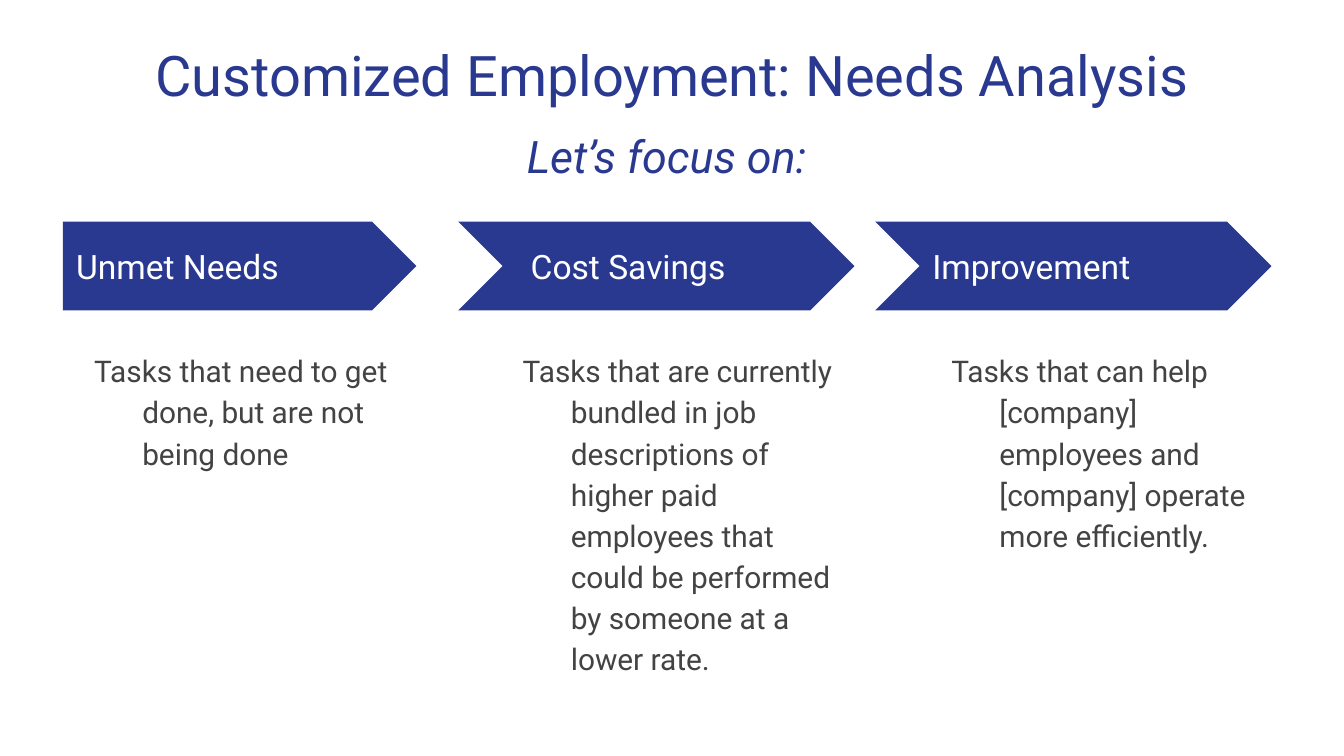
from pptx import Presentation
from pptx.dml.color import RGBColor
from pptx.enum.shapes import MSO_SHAPE
from pptx.enum.text import MSO_ANCHOR, MSO_AUTO_SIZE, PP_ALIGN
from pptx.util import Cm, Pt


def color(code):
    return RGBColor.from_string(code)


class Deck:
    font = "Roboto"
    blue = "2A3990"
    gray = "434343"
    white = "FFFFFF"
    inset = Cm(0.25)

    def __init__(self, wide, high):
        self.file = Presentation()
        self.file.slide_width = Cm(wide)
        self.file.slide_height = Cm(high)
        self.slide = self.file.slides.add_slide(self.file.slide_layouts[5])

    def style(self, shape, text, size, code, anchor=MSO_ANCHOR.TOP):
        frame = shape.text_frame
        frame.text = text
        frame.word_wrap = True
        frame.auto_size = MSO_AUTO_SIZE.NONE
        frame.vertical_anchor = anchor
        frame.margin_left = frame.margin_right = self.inset
        frame.margin_top = frame.margin_bottom = self.inset
        line = frame.paragraphs[0]
        for run in line.runs:
            run.font.name = self.font
            run.font.size = Pt(size)
            run.font.color.rgb = color(code)
        return line

    def title(self, text, left, top, wide, high):
        shape = self.slide.shapes.title
        shape.left, shape.top = Cm(left), Cm(top)
        shape.width, shape.height = Cm(wide), Cm(high)
        self.style(shape, text, 30, self.blue).alignment = PP_ALIGN.CENTER

    def box(self, left, top, wide, high):
        return self.slide.shapes.add_textbox(Cm(left), Cm(top), Cm(wide), Cm(high))

    def lead(self, text, *place):
        line = self.style(self.box(*place), text, 24, self.blue)
        line.alignment = PP_ALIGN.CENTER
        line.runs[0].font.italic = True

    def arrow(self, kind, left, top, wide, high):
        shape = self.slide.shapes.add_shape(kind, Cm(left), Cm(top), Cm(wide), Cm(high))
        shape.shadow.inherit = False
        shape.fill.solid()
        shape.fill.fore_color.rgb = color(self.blue)
        shape.line.fill.background()

    def label(self, text, *place):
        self.style(self.box(*place), text, 18, self.white, MSO_ANCHOR.MIDDLE)

    def body(self, text, *place):
        line = self.style(self.box(*place), text, 16, self.gray)
        line.line_spacing = 1.15
        line.space_after = Pt(8)
        props = line._p.get_or_add_pPr()
        props.set("marL", str(Cm(1.27)))
        props.set("indent", str(Cm(-0.91)))

    def save(self):
        self.file.save("out.pptx")


def main():
    deck = Deck(25.4, 14.29)
    deck.title("Customized Employment: Needs Analysis", 0.41, 0.51, 24.59, 1.68)
    deck.lead("Let’s focus on: ", 0.41, 2.18, 24.59, 1.68)
    steps = [
        (MSO_SHAPE.PENTAGON, 1.19, 6.68, "Unmet Needs", 1.19, 7.26,
         "Tasks that need to get done, but are not being done"),
        (MSO_SHAPE.CHEVRON, 8.66, 7.49, "Cost Savings", 9.78, 6.27,
         "Tasks that are currently bundled in job descriptions of higher paid "
         "employees that could be performed by someone at a lower rate."),
        (MSO_SHAPE.CHEVRON, 16.54, 7.49, "Improvement", 17.37, 6.27,
         "Tasks that can help [company] employees and [company] operate "
         "more efficiently."),
    ]
    for rank, (kind, left, wide, name, start, span, text) in enumerate(steps):
        deck.arrow(kind, left, 4.19, wide, 1.68)
        deck.label(name, start, 4.6, span, 0.86)
        deck.body(text, 1.17 + 8.1 * rank, 6.32, 6.86, 7.37)
    deck.save()


if __name__ == "__main__":
    main()
